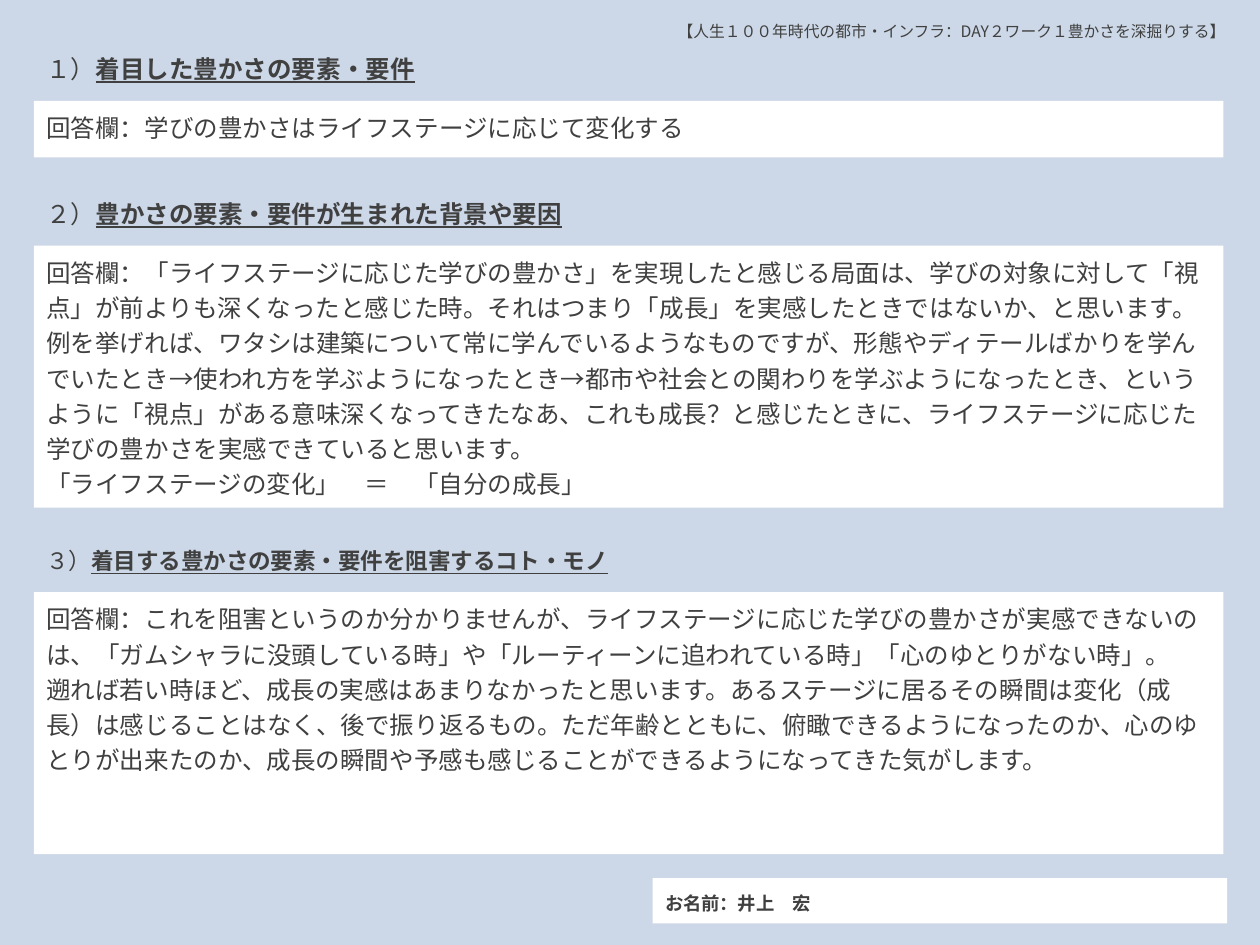
from pptx import Presentation
from pptx.dml.color import RGBColor
from pptx.enum.shapes import MSO_SHAPE
from pptx.enum.text import MSO_ANCHOR, PP_ALIGN
from pptx.oxml.ns import qn
from pptx.util import Inches, Pt
from lxml import etree

RECTANGLE = MSO_SHAPE.RECTANGLE
TOP, MIDDLE = MSO_ANCHOR.TOP, MSO_ANCHOR.MIDDLE
LEFT = PP_ALIGN.LEFT
FONT = "Noto Sans CJK JP"
TEXT, WHITE, BACKGROUND = "404040", "FFFFFF", "CCD8E7"
MARGIN, ANSWER_WIDTH = 0.27, 9.44

SECTIONS = [
    {
        "heading": ("１）", "着目した豊かさの要素・要件"),
        "heading_box": (MARGIN, 0.33, 3.21, 0.45),
        "size": 14,
        "answer_box": (MARGIN, 0.8, ANSWER_WIDTH, 0.45),
        "answer": ["回答欄：学びの豊かさはライフステージに応じて変化する"],
    },
    {
        "heading": ("２）", "豊かさの要素・要件が生まれた背景や要因"),
        "heading_box": (MARGIN, 1.48, 4.77, 0.45),
        "size": 14,
        "answer_box": (MARGIN, 1.95, ANSWER_WIDTH, 2.08),
        "answer": [
            "回答欄：「ライフステージに応じた学びの豊かさ」を実現したと感じる局面は、"
            "学びの対象に対して「視点」が前よりも深くなったと感じた時。"
            "それはつまり「成長」を実感したときではないか、と思います。",
            "例を挙げれば、ワタシは建築について常に学んでいるようなものですが、"
            "形態やディテールばかりを学んでいたとき→使われ方を学ぶようになったとき→"
            "都市や社会との関わりを学ぶようになったとき、というように「視点」が"
            "ある意味深くなってきたなあ、これも成長？と感じたときに、"
            "ライフステージに応じた学びの豊かさを実感できていると思います。",
            "「ライフステージの変化」　＝　「自分の成長」",
        ],
    },
    {
        "heading": ("３）", "着目する豊かさの要素・要件を阻害するコト・モノ"),
        "heading_box": (MARGIN, 4.25, 4.84, 0.45),
        "size": 12.9,
        "answer_box": (MARGIN, 4.7, ANSWER_WIDTH, 2.08),
        "answer": [
            "回答欄：これを阻害というのか分かりませんが、"
            "ライフステージに応じた学びの豊かさが実感できないのは、"
            "「ガムシャラに没頭している時」や「ルーティーンに追われている時」"
            "「心のゆとりがない時」。",
            "遡れば若い時ほど、成長の実感はあまりなかったと思います。"
            "あるステージに居るその瞬間は変化（成長）は感じることはなく、"
            "後で振り返るもの。ただ年齢とともに、俯瞰できるようになったのか、"
            "心のゆとりが出来たのか、成長の瞬間や予感も"
            "感じることができるようになってきた気がします。",
        ],
    },
]


def color(value):
    """Turn a hex string into a colour."""
    return RGBColor.from_string(value)


def style_paragraph(paragraph, size, bold=None):
    """Give a paragraph the worksheet's font, colour and line spacing."""
    paragraph.alignment = LEFT
    paragraph.line_spacing = 1.2
    font = paragraph.font
    font.name, font.size, font.bold = FONT, Pt(size), bold
    font.color.rgb = color(TEXT)
    defaults = paragraph._p.pPr.find(qn("a:defRPr"))
    etree.SubElement(defaults, qn("a:ea"), typeface=FONT)


def add_label(slide, box, runs, size):
    """Add an unfilled line of text; every run after the first is emphasised."""
    frame = slide.shapes.add_textbox(*map(Inches, box)).text_frame
    frame.word_wrap = False
    paragraph = frame.paragraphs[0]
    for index, text in enumerate(runs):
        run = paragraph.add_run()
        run.text = text
        if index:
            run.font.bold = run.font.underline = True
    style_paragraph(paragraph, size)


def add_panel(slide, box, lines, size, anchor=TOP, bold=None):
    """Add a white panel with one paragraph for each line."""
    shape = slide.shapes.add_shape(RECTANGLE, *map(Inches, box))
    shape.shadow.inherit = False
    shape.fill.solid()
    shape.fill.fore_color.rgb = color(WHITE)
    shape.line.fill.background()
    frame = shape.text_frame
    frame.word_wrap = True
    frame.vertical_anchor = anchor
    frame.text = "\n".join(lines)
    for paragraph in frame.paragraphs:
        style_paragraph(paragraph, size, bold)


def add_section(slide, section):
    """Add a numbered heading and its answer panel."""
    add_label(slide, section["heading_box"], section["heading"], section["size"])
    add_panel(slide, section["answer_box"], section["answer"], 14)


def main():
    """Build the worksheet slide."""
    presentation = Presentation()
    presentation.slide_width, presentation.slide_height = Inches(10), Inches(7.5)
    slide = presentation.slides.add_slide(presentation.slide_layouts[6])
    slide.background.fill.solid()
    slide.background.fill.fore_color.rgb = color(BACKGROUND)
    for section in SECTIONS:
        add_section(slide, section)
    add_panel(slide, (5.18, 6.97, 4.56, 0.36), ["お名前：井上　宏"], 10.5, MIDDLE, True)
    title = "【人生１００年時代の都市・インフラ：DAY２ワーク１豊かさを深掘りする】"
    add_label(slide, (5.28, 0.09, 4.83, 0.3), [title], 9)
    presentation.save("out.pptx")


if __name__ == "__main__":
    main()
